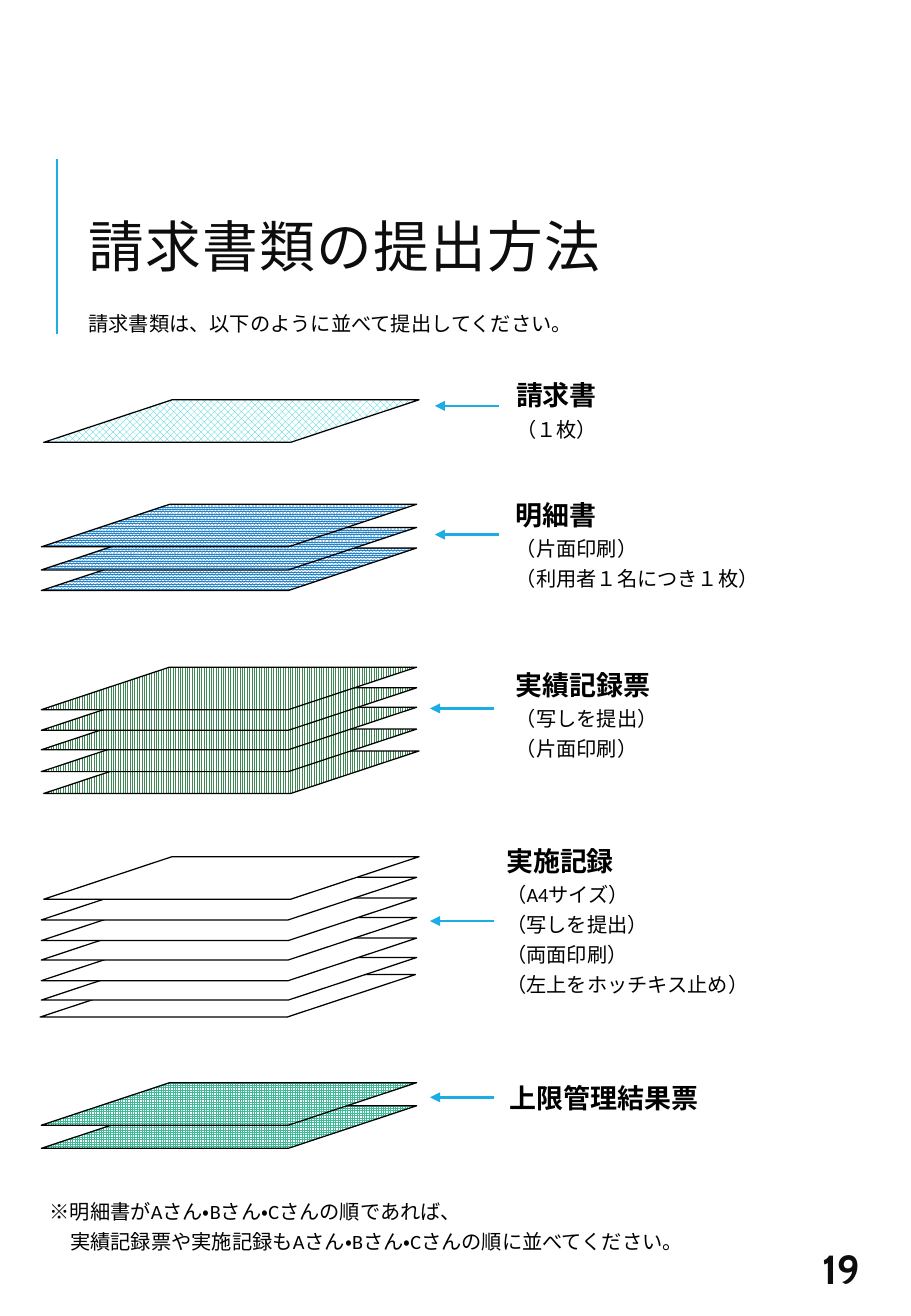
from lxml.etree import SubElement
from pptx import Presentation
from pptx.dml.color import RGBColor
from pptx.enum.dml import MSO_PATTERN
from pptx.enum.lang import MSO_LANGUAGE_ID
from pptx.enum.shapes import MSO_CONNECTOR, MSO_SHAPE
from pptx.enum.text import MSO_ANCHOR, MSO_AUTO_SIZE, PP_ALIGN
from pptx.oxml.ns import qn
from pptx.util import Emu, Pt

PX = 9144  # 100 px to the inch
BLACK = RGBColor(0x00, 0x00, 0x00)
INK = RGBColor(0x0D, 0x0D, 0x0D)
WHITE = RGBColor(0xFF, 0xFF, 0xFF)
SKY = RGBColor(0x1C, 0xAD, 0xE4)
CYAN = RGBColor(0x27, 0xCE, 0xD7)
BLUE = RGBColor(0x26, 0x83, 0xC6)
GREEN = RGBColor(0x3E, 0x88, 0x53)
TEAL = RGBColor(0x42, 0xBA, 0x97)

SHEET_WIDTH, SHEET_HEIGHT, SHEET_SLANT = 309, 35, 3.018
NOTE_INDENT = 17

TITLE = dict(name="Cabin", size=Pt(33), bold=False)
PAGE = dict(name="Cabin", size=Pt(24), bold=True)
HEADING = dict(name="Calibri", size=Pt(16), bold=True)
BODY = dict(name="Calibri", size=Pt(12), bold=False)
INTRO_SPACING = dict(line_spacing=1.2, space_before=Pt(10))
LIST_SPACING = dict(space_before=Pt(3.4))

# stack origin, sheet offsets from top to bottom, pattern, colour,
# arrow start, label box, label lines
DOCUMENTS = [
    ((36, 329), [(0, 0)], MSO_PATTERN.LARGE_CHECKER_BOARD, CYAN,
     (411, 334), (415, 307, 161, 47), ["請求書", "（１枚）"]),
    ((34, 415), [(0, 0), (0, 19), (0, 36)], MSO_PATTERN.PERCENT_90, BLUE,
     (411, 440), (415, 405, 276, 83),
     ["明細書", "（片面印刷）", "（利用者１名につき１枚）"]),
    ((34, 549), [(0, 0), (0, 17), (0, 33), (0, 51), (2, 69)],
     MSO_PATTERN.LIGHT_VERTICAL, GREEN,
     (407, 583), (415, 545, 224, 87),
     ["実績記録票", "（写しを提出）", "（片面印刷）"]),
    ((34, 705),
     [(2, 0), (0, 17), (0, 34), (0, 50), (0, 67), (0, 83), (-1, 97)],
     None, WHITE, (407, 758), (407, 690, 237, 147),
     ["実施記録", "（A4サイズ）", "（写しを提出）", "（両面印刷）",
      "（左上をホッチキス止め）"]),
    ((34, 891), [(0, 0), (0, 19)], MSO_PATTERN.SMALL_GRID, TEAL,
     (407, 903), (410, 885, 237, 53), ["上限管理結果票"]),
]


def scaled(*lengths):
    return [Emu(length * PX) for length in lengths]


def apply(target, values):
    for name, value in values.items():
        setattr(target, name, value)


def write(frame, lines, spacing, anchor=MSO_ANCHOR.TOP):
    """Fill a text frame with (text, font values, colour) lines."""
    apply(frame, dict(word_wrap=True, auto_size=MSO_AUTO_SIZE.NONE,
                      vertical_anchor=anchor))
    for index, (text, font, colour) in enumerate(lines):
        paragraph = frame.add_paragraph() if index else frame.paragraphs[0]
        apply(paragraph, dict(alignment=PP_ALIGN.LEFT, **spacing))
        run = paragraph.add_run()
        run.text = text
        apply(run.font, dict(language_id=MSO_LANGUAGE_ID.JAPANESE, **font))
        run.font.color.rgb = colour
    return frame


def add_text(slide, box, lines, spacing, anchor=MSO_ANCHOR.TOP):
    frame = slide.shapes.add_textbox(*scaled(*box)).text_frame
    return write(frame, lines, spacing, anchor)


def add_rule(slide, start, end, arrow=False):
    rule = slide.shapes.add_connector(MSO_CONNECTOR.STRAIGHT,
                                      *scaled(*start, *end))
    rule.line.color.rgb = SKY
    rule.line.width = Pt(1.5)
    if arrow:
        SubElement(rule.line._get_or_add_ln(), qn("a:tailEnd"),
                   type="triangle")
    SubElement(rule._element.spPr, qn("a:effectLst"))


def add_header(slide, box):
    left, top, width, height = box
    title = slide.shapes.title
    apply(title, dict(zip(("left", "top", "width", "height"), scaled(*box))))
    frame = write(title.text_frame, [("請求書類の提出方法", TITLE, INK)],
                  dict(line_spacing=0.8), MSO_ANCHOR.MIDDLE)
    frame.paragraphs[0].runs[0].font._element.set("spc", "80")
    add_rule(slide, (left - 16, top + 143), (left - 16, top - 1))
    add_text(slide, (left, top + 115, 520, 35),
             [("請求書類は、以下のように並べて提出してください。", BODY, BLACK)],
             INTRO_SPACING)


def add_stack(slide, origin, offsets, pattern, colour):
    """Draw the sheets from the bottom one up."""
    left, top = origin
    for dx, dy in reversed(offsets):
        sheet = slide.shapes.add_shape(
            MSO_SHAPE.PARALLELOGRAM,
            *scaled(left + dx, top + dy, SHEET_WIDTH, SHEET_HEIGHT))
        sheet.adjustments[0] = SHEET_SLANT
        sheet.shadow.inherit = False
        if pattern is None:
            sheet.fill.solid()
        else:
            sheet.fill.patterned()
            sheet.fill.pattern = pattern
            sheet.fill.back_color.rgb = WHITE
        sheet.fill.fore_color.rgb = colour
        sheet.line.color.rgb = BLACK
        sheet.line.width = Pt(0.75)


def add_document(slide, origin, offsets, pattern, colour, start, box, label):
    add_stack(slide, origin, offsets, pattern, colour)
    add_rule(slide, start, (start[0] - 53, start[1]), arrow=True)
    heading, *details = label
    add_text(slide, box,
             [(heading, HEADING, BLACK)]
             + [(detail, BODY, BLACK) for detail in details], LIST_SPACING)


def add_footer(slide, box):
    left, top, width, height = box
    note = add_text(slide, box, [
        ("※明細書がAさん・Bさん・Cさんの順であれば、", BODY, BLACK),
        ("実績記録票や実施記録もAさん・Bさん・Cさんの順に並べてください。",
         BODY, BLACK)], LIST_SPACING)
    note.paragraphs[1]._p.get_or_add_pPr().set("marL", str(NOTE_INDENT * PX))
    add_text(slide, (left + 636, top + 40, 60, 43), [("19", PAGE, INK)], {},
             MSO_ANCHOR.MIDDLE)


def main():
    deck = Presentation()
    deck.slide_width, deck.slide_height = scaled(750, 1083)
    slide = deck.slides.add_slide(deck.slide_layouts[5])
    add_header(slide, (63, 132, 598, 150))
    for document in DOCUMENTS:
        add_document(slide, *document)
    add_footer(slide, (31, 982, 625, 48))
    deck.save("out.pptx")


if __name__ == "__main__":
    main()
